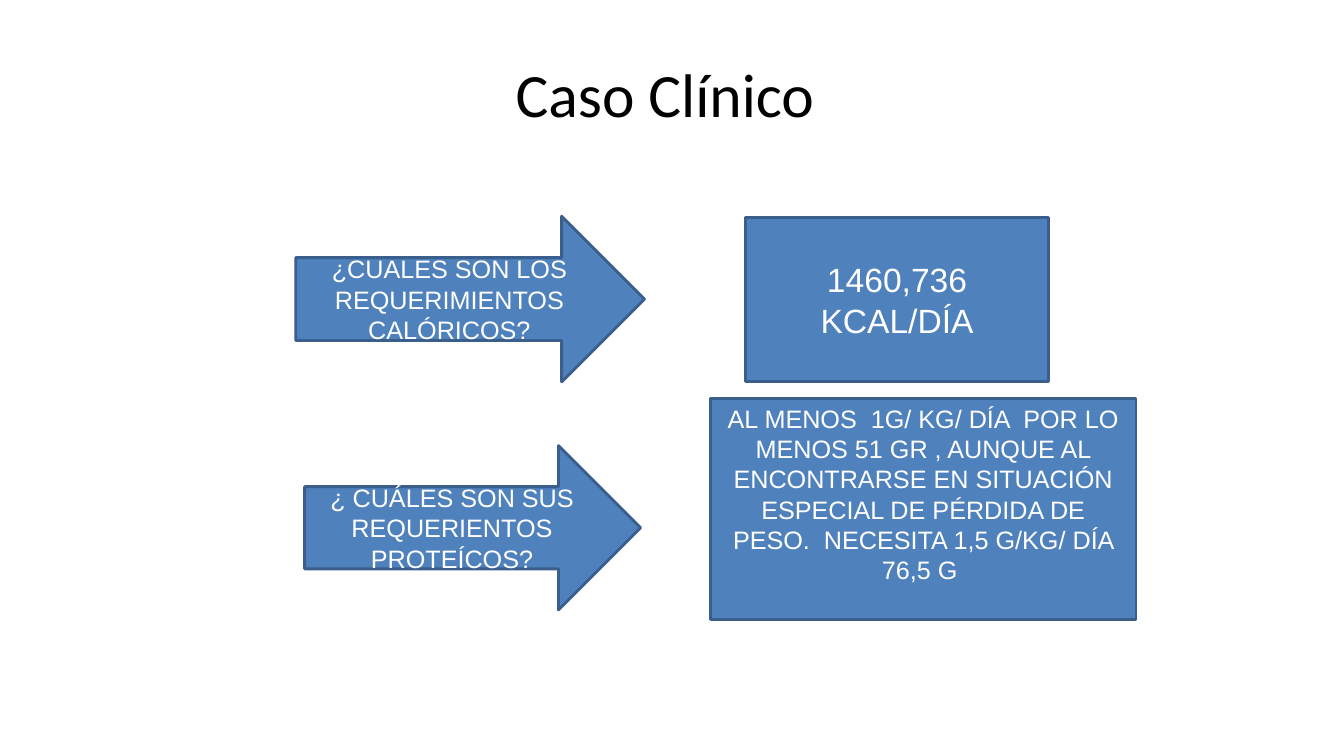
import pptx
import pptx.util
import pptx.dml.color
import pptx.enum.shapes
import pptx.enum.text

Pt = pptx.util.Pt
RGB = pptx.dml.color.RGBColor.from_string
Kind = pptx.enum.shapes.MSO_SHAPE
Anchor = pptx.enum.text.MSO_ANCHOR
Align = pptx.enum.text.PP_ALIGN

theme = {
    "fill": RGB("4F81BD"), "edge": RGB("3A5F8C"),
    "dark": RGB("000000"), "light": RGB("FFFFFF"),
    "title": 44, "large": 24, "body": 18,
    "head": "Calibri", "text": "Arial",
}


def write(shape, words, font, size, color, anchor):
    frame = shape.text_frame
    frame.text = words
    frame.word_wrap = True
    frame.vertical_anchor = anchor
    line = frame.paragraphs[0]
    line.alignment = Align.CENTER
    line.font.name = theme[font]
    line.font.size = Pt(theme[size])
    line.font.color.rgb = theme[color]


deck = pptx.Presentation()
deck.slide_width, deck.slide_height = Pt(960), Pt(540)
slide = deck.slides.add_slide(deck.slide_layouts[5])

title = slide.shapes.title
title.left, title.top, title.width, title.height = Pt(48), Pt(21.6), Pt(864), Pt(90)
write(title, "Caso Clínico ", "head", "title", "dark", Anchor.MIDDLE)

arrow, box = Kind.RIGHT_ARROW, Kind.RECTANGLE
middle, top = Anchor.MIDDLE, Anchor.TOP
blocks = [
    (arrow, 211.3, 154.4, 249.1, 118.4, "body", middle,
     "¿CUALES SON LOS REQUERIMIENTOS CALÓRICOS?"),
    (box, 532.6, 155.4, 216.3, 117.2, "large", middle,
     "1460,736 KCAL/DÍA"),
    (arrow, 217.6, 318.3, 240, 117.4, "body", middle,
     "¿ CUÁLES SON SUS REQUERIENTOS PROTEÍCOS?"),
    (box, 507.5, 284.4, 304, 158.4, "body", top,
     "AL MENOS  1G/ KG/ DÍA  POR LO MENOS 51 GR , AUNQUE AL ENCONTRARSE "
     "EN SITUACIÓN ESPECIAL DE PÉRDIDA DE PESO.  NECESITA 1,5 G/KG/ DÍA 76,5 G "),
]
for kind, x, y, wide, high, size, anchor, words in blocks:
    shape = slide.shapes.add_shape(kind, Pt(x), Pt(y), Pt(wide), Pt(high))
    shape.shadow.inherit = False
    shape.fill.solid()
    shape.fill.fore_color.rgb = theme["fill"]
    shape.line.color.rgb = theme["edge"]
    shape.line.width = Pt(2)
    write(shape, words, "text", size, "light", anchor)

deck.save("out.pptx")
